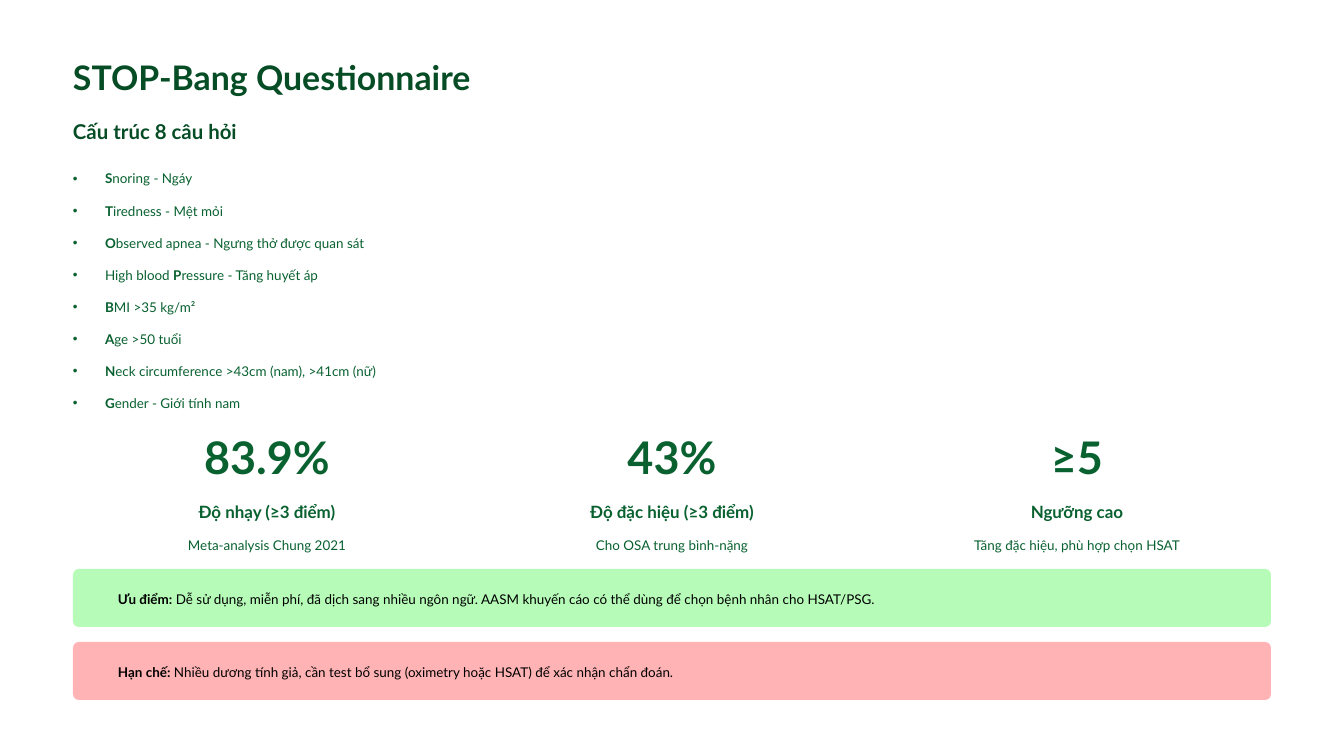
from dataclasses import dataclass

from lxml import etree
from pptx import Presentation
from pptx.dml.color import RGBColor
from pptx.enum.shapes import MSO_SHAPE
from pptx.enum.text import MSO_ANCHOR, MSO_AUTO_SIZE, PP_ALIGN
from pptx.oxml.ns import qn
from pptx.util import Pt

ROUNDED = MSO_SHAPE.ROUNDED_RECTANGLE
TOP = MSO_ANCHOR.TOP
NO_AUTOFIT = MSO_AUTO_SIZE.NONE
LEFT, CENTER = PP_ALIGN.LEFT, PP_ALIGN.CENTER


@dataclass(frozen=True)
class Style:
    size: float
    line: float
    color: str
    align: PP_ALIGN = LEFT


class Theme:
    font = "Lato"
    dark, green, black = "064D26", "096130", "000000"
    title = Style(29, 36.5, dark)
    heading = Style(17.5, 21.5, dark)
    item = Style(11.5, 18.5, green)
    number = Style(38.5, 38.5, green, CENTER)
    label = Style(14.5, 18, green, CENTER)
    detail = Style(11.5, 18.5, green, CENTER)
    note = Style(11.5, 18.5, black)
    pro, con = "B6FCB8", "FFB3B4"


# Content: each line is a list of (text, bold) runs
TITLE = "STOP-Bang Questionnaire"
HEADING = "Cấu trúc 8 câu hỏi"
QUESTIONS = [
    [("S", True), ("noring - Ngáy", False)],
    [("T", True), ("iredness - Mệt mỏi", False)],
    [("O", True), ("bserved apnea - Ngưng thở được quan sát", False)],
    [("High blood ", False), ("P", True), ("ressure - Tăng huyết áp", False)],
    [("B", True), ("MI >35 kg/m²", False)],
    [("A", True), ("ge >50 tuổi", False)],
    [("N", True), ("eck circumference >43cm (nam), >41cm (nữ)", False)],
    [("G", True), ("ender - Giới tính nam", False)],
]
STATISTICS = [
    ("83.9%", "Độ nhạy (≥3 điểm)", "Meta-analysis Chung 2021"),
    ("43%", "Độ đặc hiệu (≥3 điểm)", "Cho OSA trung bình-nặng"),
    ("≥5", "Ngưỡng cao", "Tăng đặc hiệu, phù hợp chọn HSAT"),
]
NOTES = [
    (Theme.pro, "Ưu điểm:", " Dễ sử dụng, miễn phí, đã dịch sang nhiều ngôn ngữ. "
     "AASM khuyến cáo có thể dùng để chọn bệnh nhân cho HSAT/PSG."),
    (Theme.con, "Hạn chế:", " Nhiều dương tính giả, cần test bổ sung "
     "(oximetry hoặc HSAT) để xác nhận chẩn đoán."),
]

# Layout in px
SLIDE_WIDTH, SLIDE_HEIGHT = 1344, 756
MARGIN = 73
CONTENT_WIDTH = SLIDE_WIDTH - 2 * MARGIN
COLUMN_GAP = 17
COLUMN_WIDTH = (CONTENT_WIDTH - 2 * COLUMN_GAP) // 3
STATISTIC_ROWS = [(439, 45, Theme.number, True), (501, 21, Theme.label, True),
                  (532, 22, Theme.detail, False)]
NOTE_TOP, NOTE_HEIGHT, NOTE_PITCH = 569, 58, 73
NOTE_INDENT, NOTE_PADDING = 45, 17
BULLET_INDENT = 32
ITEM_SPACE = 9  # points


def px(value):
    return round(value * 914400 / 84)


def place(shape, left, top, width, height):
    shape.left, shape.top = px(left), px(top)
    shape.width, shape.height = px(width), px(height)


def write(shape, lines, style):
    """Fill a shape with lines of (text, bold) runs."""
    frame = shape.text_frame
    frame.margin_left = frame.margin_right = 0
    frame.margin_top = frame.margin_bottom = 0
    frame.word_wrap = True
    frame.auto_size = NO_AUTOFIT
    frame.vertical_anchor = TOP
    for index, runs in enumerate(lines):
        paragraph = frame.add_paragraph() if index else frame.paragraphs[0]
        paragraph.alignment = style.align
        paragraph.line_spacing = Pt(style.line)
        paragraph.space_before = Pt(0)
        for text, bold in runs:
            run = paragraph.add_run()
            run.text = text
            run.font.name = Theme.font
            run.font.size = Pt(style.size)
            run.font.bold = bold
            run.font.color.rgb = RGBColor.from_string(style.color)


def add_text(slide, box, runs, style):
    shape = slide.shapes.add_textbox(*map(px, box))
    write(shape, [runs], style)


def add_bullet(paragraph):
    paragraph.space_after = Pt(ITEM_SPACE)
    properties = paragraph._p.get_or_add_pPr()
    properties.set("marL", str(px(BULLET_INDENT)))
    properties.set("indent", str(-px(BULLET_INDENT)))
    etree.SubElement(properties, qn("a:buChar")).set("char", "•")


def main():
    presentation = Presentation()
    presentation.slide_width = px(SLIDE_WIDTH)
    presentation.slide_height = px(SLIDE_HEIGHT)
    slide = presentation.slides.add_slide(presentation.slide_layouts[1])

    # Title and heading
    title = slide.shapes.title
    place(title, MARGIN, 55, CONTENT_WIDTH, 43)
    write(title, [[(TITLE, True)]], Theme.title)
    add_text(slide, (MARGIN, 119, CONTENT_WIDTH, 26), [(HEADING, True)], Theme.heading)

    # Question list
    questions = slide.placeholders[1]
    place(questions, MARGIN, 165, CONTENT_WIDTH, 256)
    write(questions, QUESTIONS, Theme.item)
    for paragraph in questions.text_frame.paragraphs:
        add_bullet(paragraph)

    # Statistics in three columns
    for column, texts in enumerate(STATISTICS):
        left = MARGIN + column * (COLUMN_WIDTH + COLUMN_GAP)
        for text, (top, height, style, bold) in zip(texts, STATISTIC_ROWS):
            add_text(slide, (left, top, COLUMN_WIDTH, height), [(text, bold)], style)

    # Advantage and limitation notes
    for row, (fill, lead, text) in enumerate(NOTES):
        top = NOTE_TOP + row * NOTE_PITCH
        card = slide.shapes.add_shape(
            ROUNDED, *map(px, (MARGIN, top, CONTENT_WIDTH, NOTE_HEIGHT)))
        card.adjustments[0] = 0.1
        card.shadow.inherit = False
        card.fill.solid()
        card.fill.fore_color.rgb = RGBColor.from_string(fill)
        card.line.fill.background()
        box = (MARGIN + NOTE_INDENT, top + NOTE_PADDING, 1140, 22)
        add_text(slide, box, [(lead, True), (text, False)], Theme.note)

    presentation.save("out.pptx")


if __name__ == "__main__":
    main()
